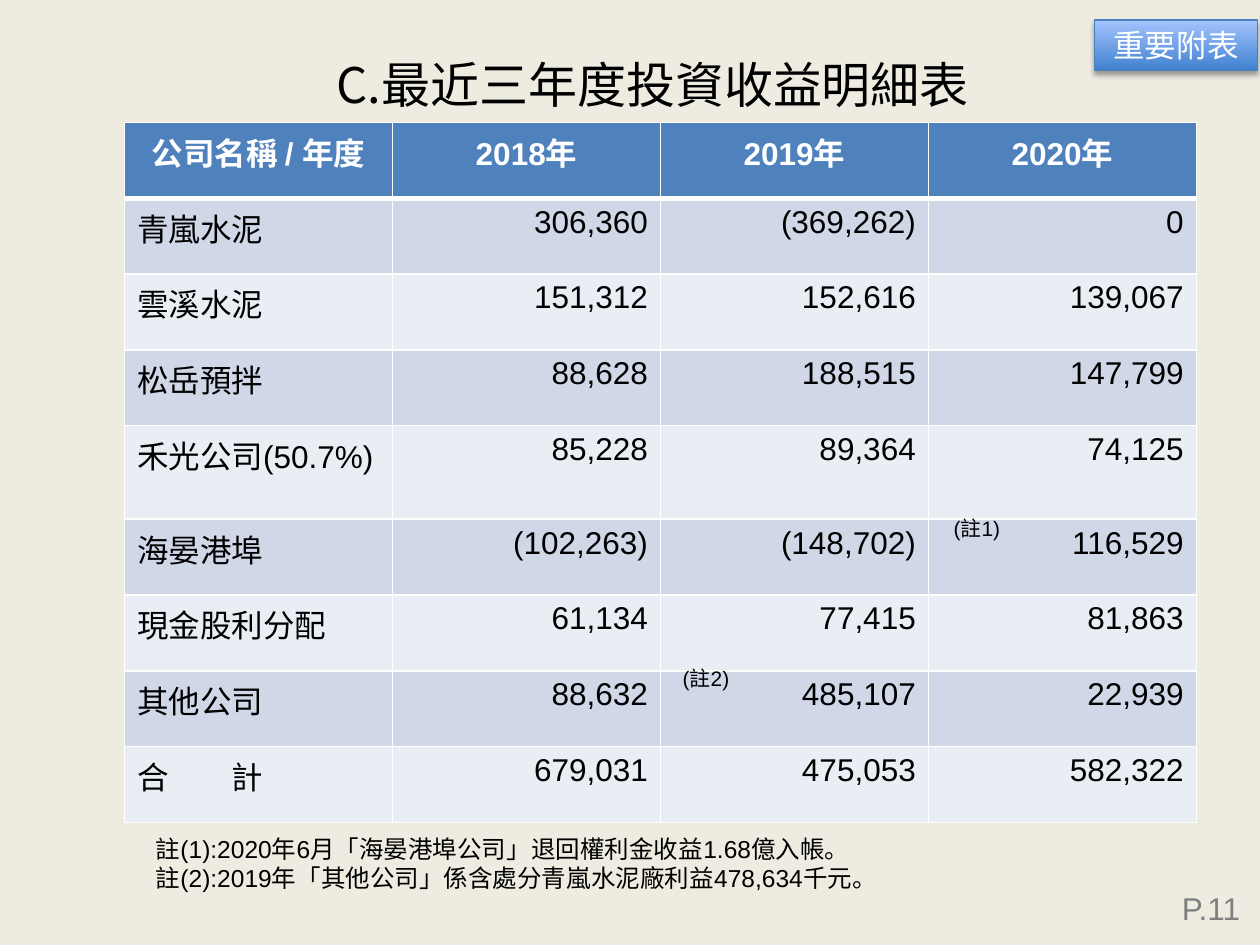
from dataclasses import dataclass

from lxml.etree import SubElement as add_element
from pptx import Presentation
from pptx.dml.color import RGBColor as Color
from pptx.enum.shapes import MSO_SHAPE as Shape
from pptx.enum.text import MSO_ANCHOR as Anchor, MSO_AUTO_SIZE as AutoSize, PP_ALIGN as Align
from pptx.oxml.ns import qn
from pptx.util import Pt


@dataclass(frozen=True)
class Theme:
    paper: str = "EEECE1"
    ink: str = "000000"
    white: str = "FFFFFF"
    grey: str = "808080"
    header: str = "4F81BD"
    bands: tuple = ("D0D8E8", "E9EDF4")
    tag_stops: tuple = ("3F80CE", "A4C4FF")
    tag_line: str = "4B7EBC"
    latin: str = "Arial"
    asian: str = "Noto Sans CJK SC"
    title_size: int = 28
    text_size: int = 18
    note_size: int = 14
    mark_size: int = 12


ROWS = [
    ("公司名稱 / 年度", "2018年", "2019年", "2020年"),
    ("青嵐水泥", "306,360", "(369,262)", "0"),
    ("雲溪水泥", "151,312", "152,616", "139,067"),
    ("松岳預拌", "88,628", "188,515", "147,799"),
    ("禾光公司(50.7%)", "85,228", "89,364", "74,125"),
    ("海晏港埠", "(102,263)", "(148,702)", "116,529"),
    ("現金股利分配", "61,134", "77,415", "81,863"),
    ("其他公司", "88,632", "485,107", "22,939"),
    ("合　　計", "679,031", "475,053", "582,322"),
]
NOTES = [
    "註(1):2020年6月「海晏港埠公司」退回權利金收益1.68億入帳。",
    "註(2):2019年「其他公司」係含處分青嵐水泥廠利益478,634千元。",
]


def set_all(target, values):
    for name, value in values.items():
        setattr(target, name, value)


class SlideBuilder:
    def __init__(self, deck, theme):
        self.theme = theme
        self.page = deck.slides.add_slide(deck.slide_layouts[5])
        fill = self.page.background.fill
        fill.solid()
        fill.fore_color.rgb = Color.from_string(theme.paper)

    def fill_text(self, frame, lines, size, color=None, align=Align.LEFT, font=None, bold=False):
        for index, line in enumerate(lines):
            para = frame.paragraphs[0] if index == 0 else frame.add_paragraph()
            para.alignment = align
            span = para.add_run()
            span.text = line
            set_all(span.font, {"name": font or self.theme.latin, "size": Pt(size), "bold": bold})
            span.font.color.rgb = Color.from_string(color or self.theme.ink)
            add_element(span.font._element, qn("a:ea"), typeface=self.theme.asian)

    def title(self, text, place):
        box = self.page.shapes.title
        set_all(box, dict(zip(("left", "top", "width", "height"), map(Pt, place))))
        set_all(box.text_frame, {
            "word_wrap": True, "vertical_anchor": Anchor.TOP, "auto_size": AutoSize.NONE})
        self.fill_text(box.text_frame, [text], self.theme.title_size,
                       align=Align.CENTER, font=self.theme.asian)

    def text(self, lines, place, size, side_margin=7.2, **style):
        box = self.page.shapes.add_textbox(*map(Pt, place))
        set_all(box.text_frame, {
            "word_wrap": True, "margin_left": Pt(side_margin), "margin_right": Pt(side_margin)})
        self.fill_text(box.text_frame, lines, size, **style)

    def borders(self, cell, bottom):
        for side, width in (("L", 1), ("R", 1), ("T", 1), ("B", bottom)):
            line = add_element(cell._tc.get_or_add_tcPr(), qn(f"a:ln{side}"), w=str(Pt(width)))
            fill = add_element(line, qn("a:solidFill"))
            add_element(fill, qn("a:srgbClr"), val=self.theme.white)

    def table(self, rows, place):
        left, top, width, height = map(Pt, place)
        table = self.page.shapes.add_table(
            len(rows), len(rows[0]), left, top, width, height).table
        for row, values in enumerate(rows):
            head = row == 0
            for column, value in enumerate(values):
                cell = table.cell(row, column)
                self.borders(cell, 3 if head else 1)
                cell.fill.solid()
                shade = self.theme.header if head else self.theme.bands[(row - 1) % 2]
                cell.fill.fore_color.rgb = Color.from_string(shade)
                align = Align.CENTER if head else Align.RIGHT if column else Align.LEFT
                self.fill_text(cell.text_frame, [value], self.theme.text_size, align=align,
                               color=self.theme.white if head else self.theme.ink, bold=head)

    def tag(self, text, place):
        shape = self.page.shapes.add_shape(Shape.RECTANGLE, *map(Pt, place))
        shape.shadow.inherit = False
        effects = shape._element.spPr.find(qn("a:effectLst"))
        shadow = add_element(effects, qn("a:outerShdw"), blurRad=str(Pt(3.1)),
                             dist=str(Pt(1.8)), dir="5400000", rotWithShape="0")
        shade = add_element(shadow, qn("a:srgbClr"), val=self.theme.ink)
        add_element(shade, qn("a:alpha"), val="35000")
        shape.fill.gradient()
        shape.fill.gradient_angle = 90
        for stop, position, color in zip(shape.fill.gradient_stops, (0, 1), self.theme.tag_stops):
            stop.position = position
            stop.color.rgb = Color.from_string(color)
        shape.line.color.rgb = Color.from_string(self.theme.tag_line)
        shape.line.width = Pt(0.75)
        set_all(shape.text_frame, {"word_wrap": True, "vertical_anchor": Anchor.TOP})
        self.fill_text(shape.text_frame, [text], self.theme.text_size, color=self.theme.white,
                       align=Align.CENTER, font=self.theme.asian)


def main():
    theme = Theme()
    deck = Presentation()
    set_all(deck, {"slide_width": Pt(720), "slide_height": Pt(540)})
    slide = SlideBuilder(deck, theme)
    slide.table(ROWS, (71.2, 70, 612.4, 390))
    slide.title("C.最近三年度投資收益明細表", (82, 27.4, 582, 41))
    slide.text(NOTES, (82, 473, 552, 41), theme.note_size)
    for mark, left, top in (("(註1)", 537.8, 291), ("(註2)", 383, 376.6)):
        slide.text([mark], (left, top, 44.6, 21.6), theme.mark_size)
    slide.text(["P.11"], (664, 504.7, 56, 29), theme.text_size, side_margin=0,
               color=theme.grey, align=Align.CENTER)
    slide.tag("重要附表", (625.6, 11.5, 92.9, 29))
    deck.save("out.pptx")


if __name__ == "__main__":
    main()
